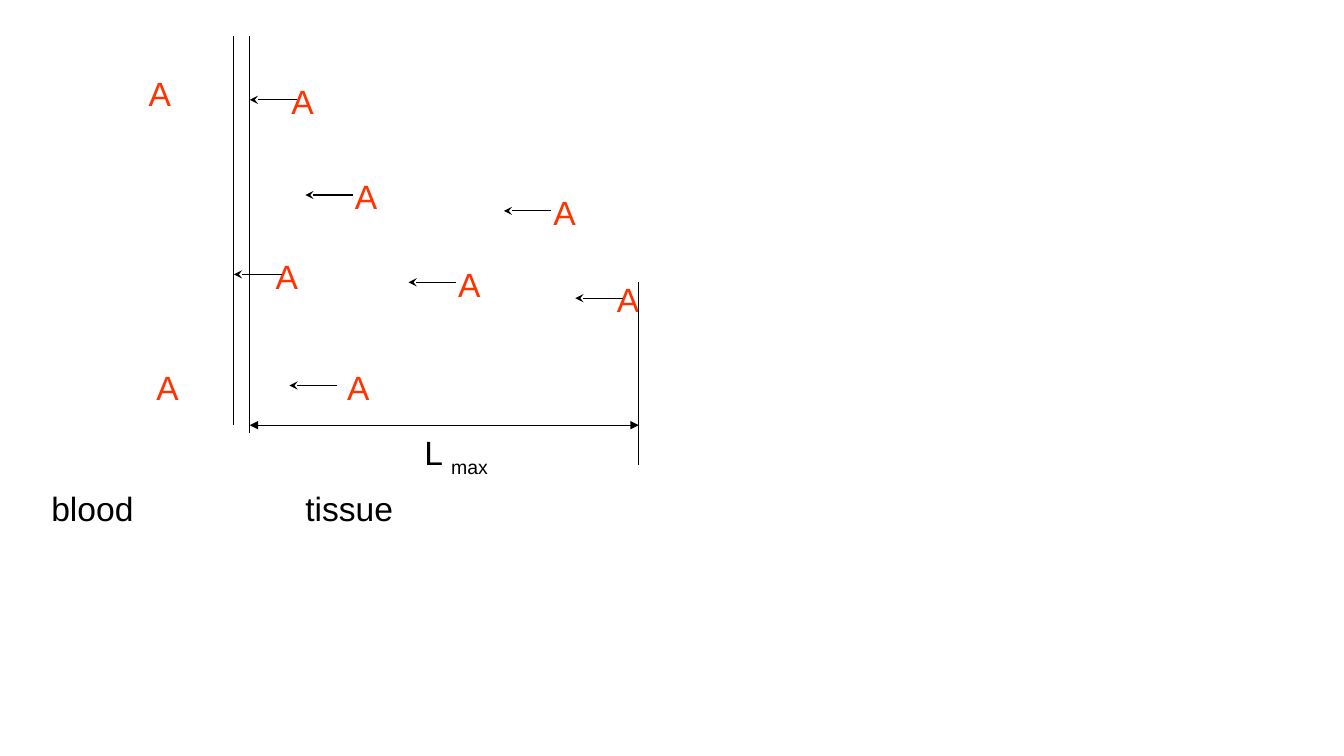
"""Draw substance A diffusing from tissue towards blood across a vessel wall."""
from pptx import Presentation
from pptx.dml.color import RGBColor
from pptx.enum.shapes import MSO_CONNECTOR as Connector
from pptx.enum.text import MSO_AUTO_SIZE as AutoSize
from pptx.oxml.ns import qn
from pptx.util import Cm, Inches, Pt
from lxml.etree import SubElement

BLACK = RGBColor(0x00, 0x00, 0x00)
ORANGE_RED = RGBColor(0xFF, 0x33, 0x00)

WALL_LEFT, WALL_RIGHT, TISSUE_END = 0, 2, 51
ARROW_COLUMNS = 6
LETTER_COLUMNS = 5.33
LABEL_ROW = 56.25
SPAN_ROW = 49

LETTERS = [(-12, 4), (39, 19), (14, 17), (47, 30), (4, 27),
           (-11, 41), (6, 5), (27, 28), (13, 41)]
ARROW_TIPS = [(2, 8), (9, 20), (34, 22), (22, 31), (43, 33), (0, 30), (7, 44)]


class Diagram:
    font = "Arial"
    size = Pt(24)
    stroke = Pt(0.75)
    step = Cm(0.2)
    left, top = Inches(2.32), Inches(0.36)
    text_rows = 6.35

    def __init__(self, page):
        self.page = page

    def x(self, column):
        return round(self.left + column * self.step)

    def y(self, row):
        return round(self.top + row * self.step)

    def line(self, start, end, head=None, tail=None):
        line = self.page.shapes.add_connector(
            Connector.STRAIGHT, self.x(start[0]), self.y(start[1]),
            self.x(end[0]), self.y(end[1]))
        line.line.color.rgb = BLACK
        line.line.width = self.stroke
        properties = line.element.spPr
        outline = properties.find(qn("a:ln"))
        for tag, kind in (("a:headEnd", head), ("a:tailEnd", tail)):
            if kind:
                SubElement(outline, qn(tag), type=kind)
        SubElement(properties, qn("a:effectLst"))

    def text(self, column, row, columns, words, color=BLACK, subscript=None):
        box = self.page.shapes.add_textbox(
            self.x(column), self.y(row),
            round(columns * self.step), round(self.text_rows * self.step))
        frame = box.text_frame
        frame.word_wrap = False
        frame.auto_size = AutoSize.SHAPE_TO_FIT_TEXT
        para = frame.paragraphs[0]
        para.font.name = self.font
        para.font.size = self.size
        para.font.color.rgb = color
        para.add_run().text = words
        if subscript:
            span = para.add_run()
            span.text = subscript
            span.font._element.set("baseline", "-25000")


def main():
    deck = Presentation()
    deck.slide_width, deck.slide_height = Inches(13.33), Inches(7.5)
    diagram = Diagram(deck.slides.add_slide(deck.slide_layouts[6]))

    diagram.line((WALL_LEFT, 0), (WALL_LEFT, SPAN_ROW))
    diagram.line((WALL_RIGHT, 0), (WALL_RIGHT, SPAN_ROW + 1))
    diagram.text(-24.25, LABEL_ROW, 12.95, "blood")
    diagram.text(7.75, LABEL_ROW, 13.6, "tissue")
    for column, row in LETTERS:
        diagram.text(column, row, LETTER_COLUMNS, "A", ORANGE_RED)

    diagram.line((TISSUE_END, 31), (TISSUE_END, 54))
    diagram.line((WALL_RIGHT, SPAN_ROW), (TISSUE_END, SPAN_ROW),
                 head="triangle", tail="triangle")
    diagram.text(22.75, SPAN_ROW + 0.25, 11.43, "L ", subscript="max")
    for column, row in ARROW_TIPS:
        diagram.line((column + ARROW_COLUMNS, row), (column, row), tail="stealth")

    deck.save("out.pptx")


if __name__ == "__main__":
    main()
